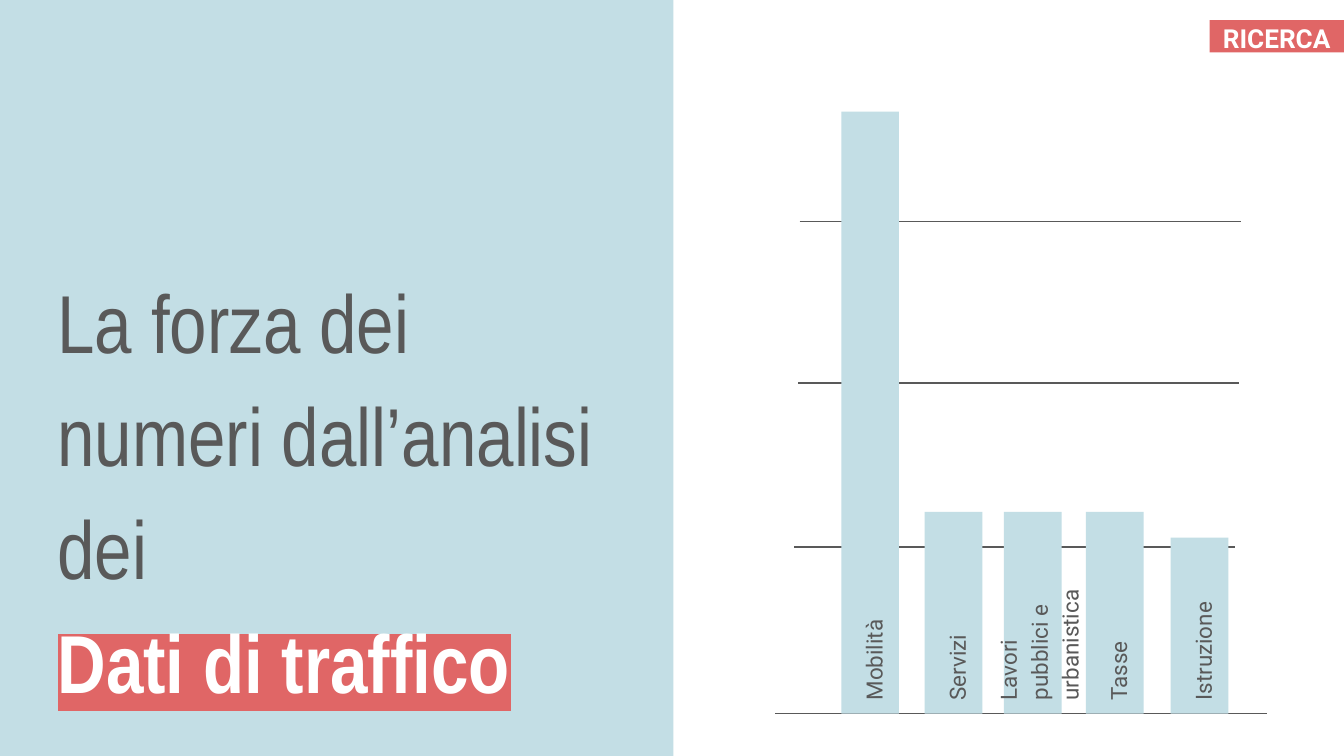
from lxml import etree
from pptx import Presentation
from pptx.dml.color import RGBColor
from pptx.enum.shapes import MSO_CONNECTOR, MSO_SHAPE
from pptx.enum.text import MSO_ANCHOR, PP_ALIGN
from pptx.oxml.ns import qn
from pptx.util import Inches, Pt

RECT = MSO_SHAPE.RECTANGLE
LINE = MSO_CONNECTOR.STRAIGHT
TOP, MIDDLE, BOTTOM = MSO_ANCHOR.TOP, MSO_ANCHOR.MIDDLE, MSO_ANCHOR.BOTTOM
CENTER = PP_ALIGN.CENTER

COLORS = {"blue": "C3DEE5", "red": "E06666", "gray": "595959", "white": "FFFFFF"}

WIDTH = Inches(10)
HEIGHT = WIDTH * 9 // 16
BASE = 5.31
BAR_WIDTH = 0.43
LABEL_DEPTH = 0.4
# Label, left of bar, height of bar, length of label box, shift of label
BARS = [
    ("Mobilità", 6.26, 4.48, 2.05, 0.01),
    ("Servizi", 6.88, 1.5, 1.27, 0.01),
    ("Lavori pubblici e urbanistica", 7.47, 1.5, 1.19, 0.03),
    ("Istruzione", 8.71, 1.31, 0.94, 0.01),
    ("Tasse", 8.08, 1.5, 0.85, 0.01),
]
# Left and height of each grid line
GRID = [(5.91, 4.07), (5.94, 2.85), (5.95, 1.65)]
GRID_WIDTH = 3.28


def color(name):
    return RGBColor.from_string(COLORS[name])


def add_rect(slide, left, top, width, height, fill):
    rect = slide.shapes.add_shape(
        RECT, Inches(left), Inches(top), Inches(width), Inches(height))
    rect.shadow.inherit = False
    rect.fill.solid()
    rect.fill.fore_color.rgb = color(fill)
    rect.line.fill.background()
    return rect


def add_rule(slide, left, top, width):
    rule = slide.shapes.add_connector(
        LINE, Inches(left), Inches(top), Inches(left + width), Inches(top))
    rule.line.color.rgb = color("gray")
    rule.line.width = Pt(0.75)
    etree.SubElement(rule._element.spPr, qn("a:effectLst"))


def add_box(slide, left, top, width, height, anchor):
    box = slide.shapes.add_textbox(
        Inches(left), Inches(top), Inches(width), Inches(height))
    set_frame(box.text_frame, anchor, 0.1, 0.1)
    return box


def set_frame(frame, anchor, side, edge):
    frame.word_wrap = True
    frame.vertical_anchor = anchor
    frame.margin_left = frame.margin_right = Inches(side)
    frame.margin_top = frame.margin_bottom = Inches(edge)


def style(para, font, size, shade, bold=False):
    for run in para.runs:
        run.font.name = font
        run.font.size = Pt(size)
        run.font.bold = bold
        run.font.color.rgb = color(shade)


def mark(run, shade):
    """Highlight a run that already has a font colour."""
    light = etree.Element(qn("a:highlight"))
    etree.SubElement(light, qn("a:srgbClr"), val=COLORS[shade])
    run.font._element.find(qn("a:solidFill")).addnext(light)


def add_title(slide):
    frame = add_box(slide, 0.33, 3.19, 4.44, 2.19, BOTTOM).text_frame
    frame.text = "La forza dei numeri dall’analisi dei\nDati di traffico"
    intro, topic = frame.paragraphs
    intro.line_spacing = topic.line_spacing = 1.15
    style(intro, "Arial Narrow", 44, "gray")
    style(topic, "Arial Narrow", 44, "white", bold=True)
    mark(topic.runs[0], "red")


def add_badge(slide):
    frame = add_rect(slide, 9, 0.15, 1, 0.24, "red").text_frame
    set_frame(frame, TOP, 0.04, 0.02)
    frame.text = "RICERCA"
    para = frame.paragraphs[0]
    para.alignment = CENTER
    style(para, "Roboto", 14, "white", bold=True)


def add_bar(slide, label, left, height, length, shift):
    """Draw a bar and its label, which reads upward from the base line."""
    add_rect(slide, left, BASE - height, BAR_WIDTH, height, "blue")
    mid = left + BAR_WIDTH / 2 + shift
    box = add_box(slide, mid - length / 2, BASE - (length + LABEL_DEPTH) / 2,
                  length, LABEL_DEPTH, MIDDLE)
    box.rotation = 270
    box.text_frame.text = label
    para = box.text_frame.paragraphs[0]
    para.line_spacing = 1.15
    style(para, "Roboto", 12, "gray")


def main():
    deck = Presentation()
    deck.slide_width, deck.slide_height = WIDTH, HEIGHT
    slide = deck.slides.add_slide(deck.slide_layouts[6])
    add_rect(slide, 0, 0, 5.01, HEIGHT.inches if hasattr(HEIGHT, "inches") else HEIGHT / Inches(1), "blue")
    add_title(slide)
    add_badge(slide)
    add_rule(slide, 5.77, BASE, 3.66)
    for left, top in GRID:
        add_rule(slide, left, top, GRID_WIDTH)
    for bar in BARS:
        add_bar(slide, *bar)
    deck.save("out.pptx")


if __name__ == "__main__":
    main()
